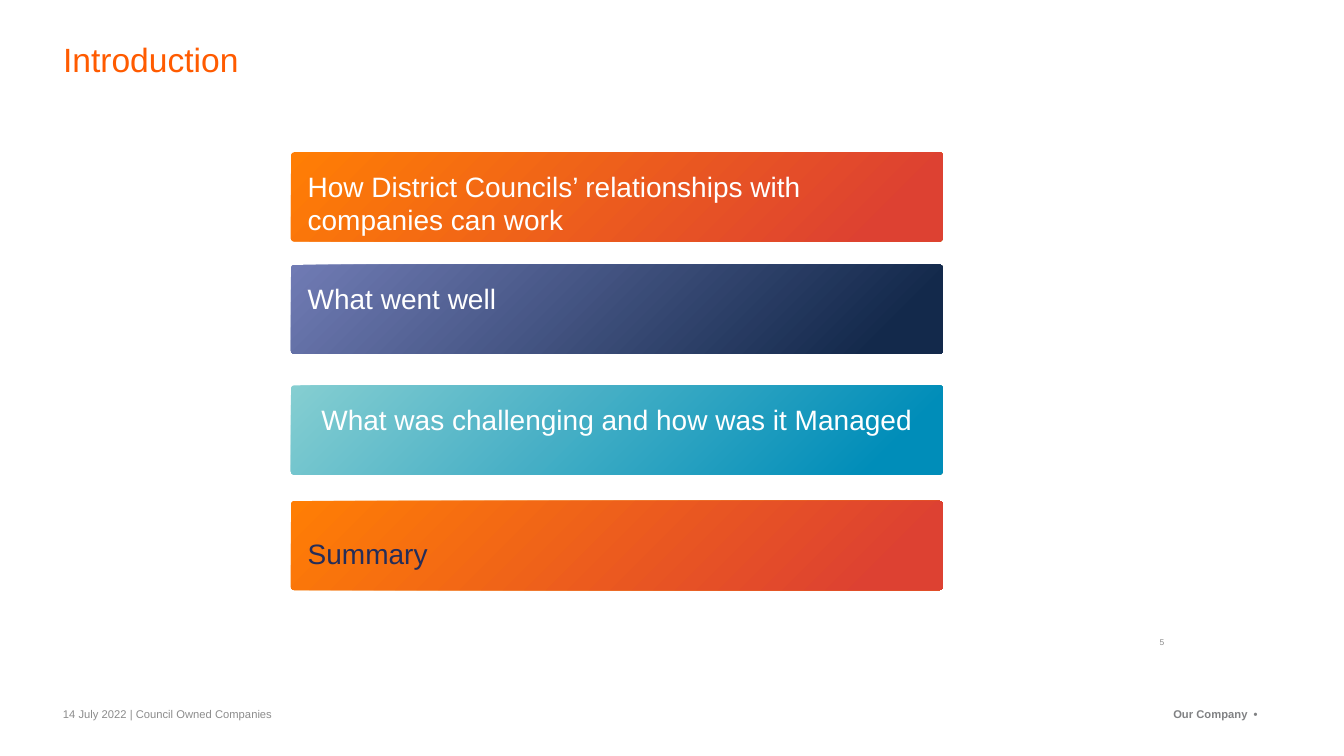
from pptx import Presentation
from pptx.dml.color import RGBColor
from pptx.enum.shapes import MSO_SHAPE
from pptx.enum.text import MSO_ANCHOR, PP_ALIGN
from pptx.util import Pt

PX = 9525
INK = {
    "title": "FF5B00",
    "white": "FFFFFF",
    "navy": "252D59",
    "gray": "8C8C8C",
    "brand": "808183",
}
FADE = {
    "orange": ("FF7E04", "DD4132"),
    "blue": ("707BB4", "13294B"),
    "teal": ("85CED1", "008DB9"),
}
LEFT, MID, RIGHT = PP_ALIGN.LEFT, PP_ALIGN.CENTER, PP_ALIGN.RIGHT
TOP, MIDDLE = MSO_ANCHOR.TOP, MSO_ANCHOR.MIDDLE

deck = Presentation()
deck.slide_width = 1280 * PX
deck.slide_height = 720 * PX
slide = deck.slides.add_slide(deck.slide_layouts[6])


def write(text, shape=None, box=None, size=8, ink="gray", bold=False,
          align=LEFT, anchor=TOP, pad=(0, 0, 0, 0), gap=0):
    if shape is None:
        shape = slide.shapes.add_textbox(*[n * PX for n in box])
    frame = shape.text_frame
    frame.word_wrap = True
    frame.vertical_anchor = anchor
    (frame.margin_left, frame.margin_top,
     frame.margin_right, frame.margin_bottom) = [n * PX for n in pad]
    para = frame.paragraphs[0]
    para.alignment = align
    para.space_before = para.space_after = Pt(gap)
    run = para.add_run()
    run.text = text
    run.font.name = "Arial"
    run.font.size = Pt(size)
    run.font.bold = bold
    run.font.color.rgb = RGBColor.from_string(INK[ink])


write("Introduction", box=(60, 37, 1159, 43), size=24, ink="title")

bars = [
    (145, "orange", "How District Councils’ relationships with companies can work",
     "white", LEFT, TOP, 8, 2),
    (252, "blue", "What went well", "white", LEFT, TOP, 15, 0),
    (367, "teal", "What was challenging and how was it Managed",
     "white", MID, TOP, 15, 0),
    (477, "orange", "Summary", "navy", LEFT, MIDDLE, 8, 2),
]
for top, fade, text, ink, align, anchor, side, gap in bars:
    bar = slide.shapes.add_shape(
        MSO_SHAPE.ROUNDED_RECTANGLE, 277 * PX, top * PX, 621 * PX, 85 * PX)
    bar.adjustments[0] = 0.04
    bar.shadow.inherit = False
    bar.line.fill.background()
    bar.fill.gradient()
    bar.fill.gradient_angle = 315
    for stop, tint, spot in zip(bar.fill.gradient_stops, FADE[fade], (0, 0.9)):
        stop.color.rgb = RGBColor.from_string(tint)
        stop.position = spot
    write(text, shape=bar, size=20, ink=ink, align=align, anchor=anchor,
          pad=(15, 15, side, 0), gap=gap)

write("5", box=(1069, 601, 40, 22), size=6, align=RIGHT, anchor=MIDDLE)
write("14 July 2022 | Council Owned Companies", box=(60, 674, 907, 22))
write("Our Company  •", box=(1097, 674, 101, 12), ink="brand", bold=True,
      align=RIGHT)

deck.save("out.pptx")
